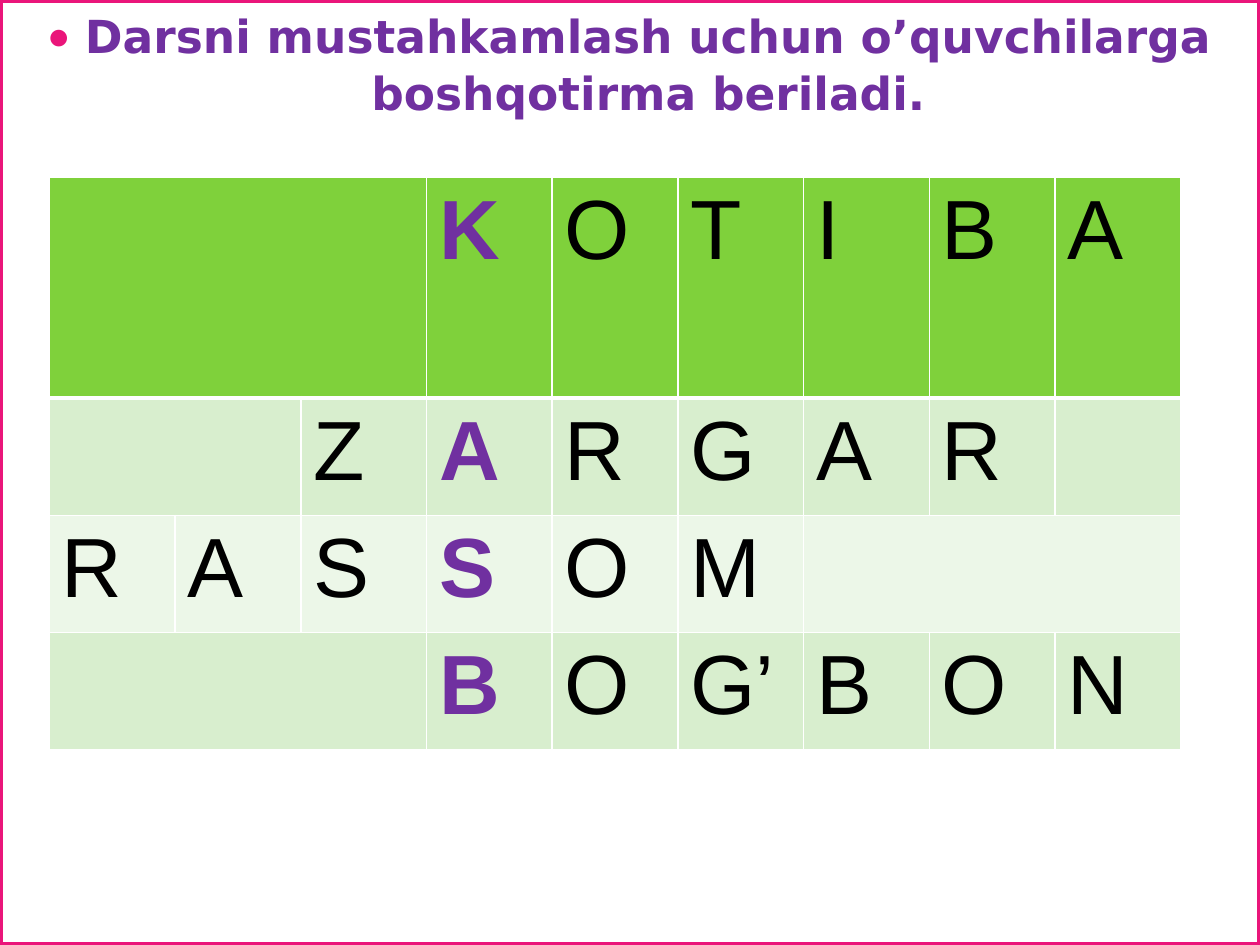
from lxml import etree
from pptx import Presentation
from pptx.dml.color import RGBColor
from pptx.enum.shapes import MSO_SHAPE
from pptx.enum.text import MSO_ANCHOR, PP_ALIGN
from pptx.oxml.ns import qn
from pptx.util import Pt

RECTANGLE = MSO_SHAPE.RECTANGLE
TOP = MSO_ANCHOR.TOP
CENTER = PP_ALIGN.CENTER

PINK, PURPLE, BLACK, WHITE = "EA157A", "7030A0", "000000", "FFFFFF"
ROW_FILLS = ["7FD13B", "D8EECE", "ECF7E8", "D8EECE"]
ROW_HEIGHTS = [126, 67, 67, 67]
COLUMN_WIDTH = 71.84
KEY_COLUMN = 3
CROSSWORD = [
    (3, ["K", "O", "T", "I", "B", "A"]),
    (2, ["Z", "A", "R", "G", "A", "R"]),
    (0, ["R", "A", "S", "S", "O", "M"]),
    (3, ["B", "O", "G’", "B", "O", "N"]),
]


def rgb(value):
    return RGBColor.from_string(value)


def add_span(para, text, *, size, font, color, bold=False):
    span = para.add_run()
    span.text = text
    span.font.size = Pt(size)
    span.font.name = font
    span.font.bold = bold
    span.font.color.rgb = rgb(color)


def add_bullet(para, character, color, percent, indent):
    properties = para._p.get_or_add_pPr()
    properties.set("marL", str(Pt(indent)))
    properties.set("indent", str(-Pt(indent)))
    bullet_color = etree.SubElement(properties, qn("a:buClr"))
    etree.SubElement(bullet_color, qn("a:srgbClr"), val=color)
    etree.SubElement(properties, qn("a:buSzPct"), val=str(percent * 1000))
    etree.SubElement(properties, qn("a:buFont"), typeface="Arial")
    etree.SubElement(properties, qn("a:buChar"), char=character)


def add_task(page, text, width, height):
    box = page.shapes.add_shape(RECTANGLE, 0, 0, width, height)
    box.shadow.inherit = False
    box.fill.solid()
    box.fill.fore_color.rgb = rgb(WHITE)
    box.line.color.rgb = rgb(PINK)
    box.line.width = Pt(3.5)
    frame = box.text_frame
    frame.word_wrap = True
    frame.vertical_anchor = TOP
    para = frame.paragraphs[0]
    para.alignment = CENTER
    para.space_before = Pt(6)
    para.line_spacing = 1.04
    add_bullet(para, "●", PINK, 85, 21.6)
    add_span(para, text, size=26, font="DejaVu Sans", color=PURPLE, bold=True)


def set_borders(cell, top, bottom):
    properties = cell._tc.get_or_add_tcPr()
    for side, width in (("L", 1), ("R", 1), ("T", top), ("B", bottom)):
        line = etree.SubElement(properties, qn(f"a:ln{side}"), w=str(Pt(width)))
        fill = etree.SubElement(line, qn("a:solidFill"))
        etree.SubElement(fill, qn("a:srgbClr"), val=WHITE)


def format_cell(cell, row):
    set_borders(cell, top=3 if row == 1 else 1, bottom=3 if row == 0 else 1)
    cell.fill.solid()
    cell.fill.fore_color.rgb = rgb(ROW_FILLS[row])


def merge_gap(table, row, first, end):
    if end - first > 1:
        table.cell(row, first).merge(table.cell(row, end - 1))


def add_crossword(page, left, top):
    columns = 9
    table = page.shapes.add_table(
        len(CROSSWORD), columns, Pt(left), Pt(top),
        Pt(COLUMN_WIDTH * columns), Pt(sum(ROW_HEIGHTS))).table
    for column in table.columns:
        column.width = Pt(COLUMN_WIDTH)
    for row, (start, letters) in enumerate(CROSSWORD):
        table.rows[row].height = Pt(ROW_HEIGHTS[row])
        for column in range(columns):
            format_cell(table.cell(row, column), row)
        for column, letter in enumerate(letters, start):
            is_key = column == KEY_COLUMN
            para = table.cell(row, column).text_frame.paragraphs[0]
            add_span(para, letter, size=48, font="Arial",
                     color=PURPLE if is_key else BLACK, bold=is_key)
        merge_gap(table, row, 0, start)
        merge_gap(table, row, start + len(letters), columns)


def main():
    deck = Presentation()
    deck.slide_width, deck.slide_height = Pt(720), Pt(540)
    page = deck.slides.add_slide(deck.slide_layouts[6])
    page.background.fill.solid()
    page.background.fill.fore_color.rgb = rgb(BLACK)
    add_task(page, "Darsni mustahkamlash uchun o’quvchilarga boshqotirma beriladi.",
             deck.slide_width, deck.slide_height)
    add_crossword(page, 28.2, 101.5)
    deck.save("out.pptx")


if __name__ == "__main__":
    main()
